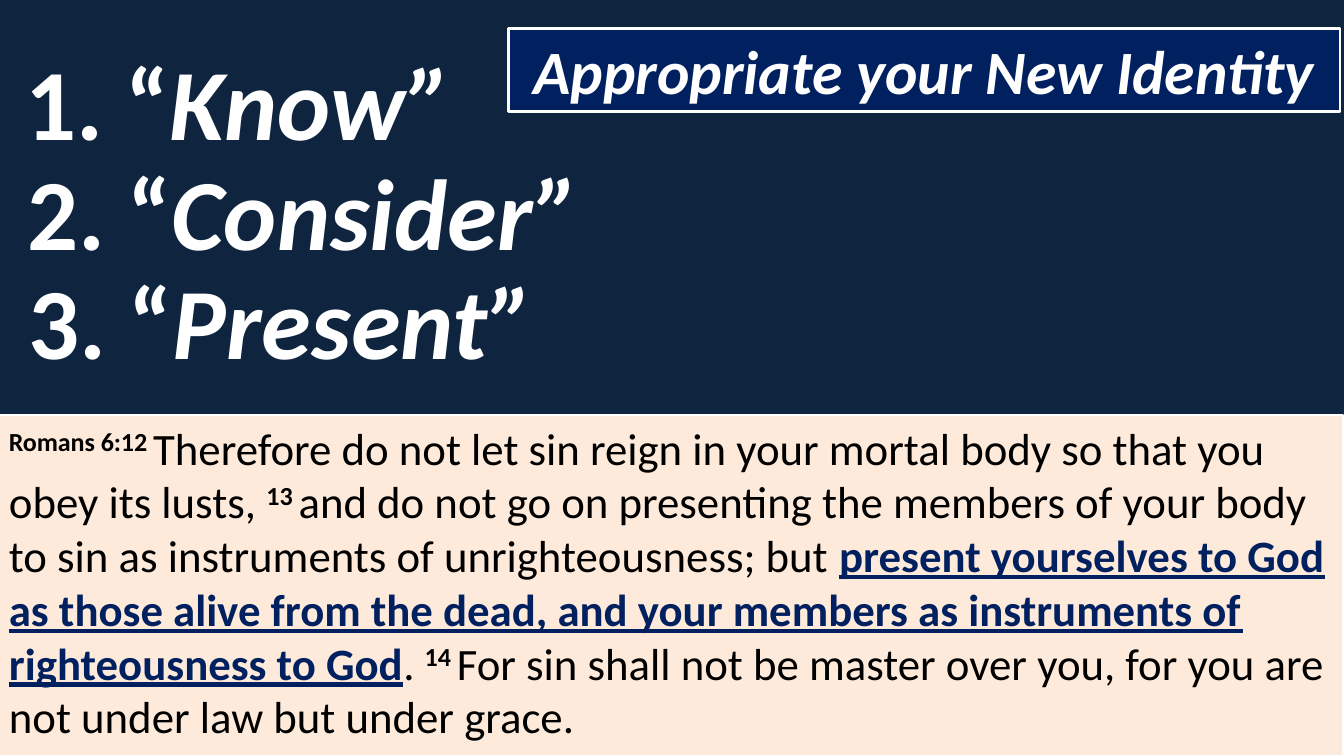
"""Build the "Appropriate your New Identity" scripture slide."""
from pptx import Presentation
from pptx.dml.color import RGBColor
from pptx.enum.shapes import MSO_SHAPE
from pptx.enum.text import MSO_ANCHOR, MSO_AUTO_SIZE, PP_ALIGN
from pptx.oxml import parse_xml
from pptx.oxml.ns import nsdecls
from pptx.util import Inches, Pt

NAVY = RGBColor(0x0F, 0x24, 0x3E)
BLUE = RGBColor(0x00, 0x20, 0x60)
PEACH = RGBColor(0xFD, 0xEA, 0xDA)
WHITE = RGBColor(0xFF, 0xFF, 0xFF)
BLACK = RGBColor(0x00, 0x00, 0x00)

STEPS = [("Know”", 0.15, 4.76), ("Consider”", 0.17, 5.75), ("Present”", 0.18, 5.75)]
STEP_TOP, STEP_PITCH = 0.33, 1.09

VERSE = {"color": BLACK}
NUMBER = {"color": BLACK, "bold": True, "raised": True}
STRESS = {"color": BLUE, "bold": True, "underline": True}
PASSAGE = [
    ("Romans 6:12 ", NUMBER),
    ("Therefore do not let sin reign in your mortal body so that you obey its lusts, ", VERSE),
    ("13 ", NUMBER),
    ("and do not go on presenting the members of your body to sin as instruments "
     "of unrighteousness; but ", VERSE),
    ("present yourselves to God as those alive from the dead, and your members "
     "as instruments of righteousness to God", STRESS),
    (". ", VERSE),
    ("14 ", NUMBER),
    ("For sin shall not be master over you, for you are not under law but under grace.", VERSE),
]
HEADING = {"color": WHITE, "bold": True}
EMPHASIS = {"color": WHITE, "bold": True, "italic": True}


class SlideBuilder:
    """Hold the font and current slide, and add styled elements to it."""

    def __init__(self, slide, font="Calibri"):
        self.slide = slide
        self.font = font

    def background(self, color):
        fill = self.slide.background.fill
        fill.solid()
        fill.fore_color.rgb = color

    def paint(self, sp, fill, line_width):
        sp.fill.solid()
        sp.fill.fore_color.rgb = fill
        sp.line.color.rgb = WHITE
        sp.line.width = Pt(line_width)

    def add_runs(self, sp, runs, size, anchor, align=PP_ALIGN.LEFT):
        tf = sp.text_frame
        tf.word_wrap = True
        tf.auto_size = MSO_AUTO_SIZE.NONE
        tf.vertical_anchor = anchor
        p = tf.paragraphs[0]
        p.alignment = align
        for text, style in runs:
            r = p.add_run()
            r.text = text
            r.font.name = self.font
            r.font.size = Pt(size)
            r.font.color.rgb = style["color"]
            r.font.bold = style.get("bold", False)
            r.font.italic = style.get("italic", False)
            r.font.underline = style.get("underline", False)
            if style.get("raised"):
                r._r.get_or_add_rPr().set("baseline", "30000")

    def title(self, text, left, top, width, height):
        sp = self.slide.shapes.title
        sp.left, sp.top = Inches(left), Inches(top)
        sp.width, sp.height = Inches(width), Inches(height)
        sp._element.spPr.append(parse_xml(
            f'<a:prstGeom {nsdecls("a")} prst="wedgeRoundRectCallout"><a:avLst>'
            '<a:gd name="adj1" fmla="val -21900"/><a:gd name="adj2" fmla="val 49600"/>'
            '<a:gd name="adj3" fmla="val 16700"/></a:avLst></a:prstGeom>'))
        self.paint(sp, BLUE, 2)
        self.add_runs(sp, [(text, EMPHASIS)], 44, MSO_ANCHOR.MIDDLE, PP_ALIGN.CENTER)

    def panel(self, runs, left, top, width, height):
        sp = self.slide.shapes.add_shape(
            MSO_SHAPE.RECTANGLE, Inches(left), Inches(top), Inches(width), Inches(height))
        sp.shadow.inherit = False
        self.paint(sp, PEACH, 1.5)
        self.add_runs(sp, runs, 32, MSO_ANCHOR.TOP)

    def label(self, runs, left, top, width, height):
        sp = self.slide.shapes.add_textbox(
            Inches(left), Inches(top), Inches(width), Inches(height))
        self.add_runs(sp, runs, 72, MSO_ANCHOR.MIDDLE)


def main():
    prs = Presentation()
    prs.slide_width, prs.slide_height = Inches(13.33), Inches(7.5)
    builder = SlideBuilder(prs.slides.add_slide(prs.slide_layouts[5]))
    builder.background(NAVY)
    builder.title("Appropriate your New Identity", 5.04, 0.28, 8.25, 0.83)
    builder.panel(PASSAGE, -0.01, 4.12, 13.33, 3.38)
    for i, (word, left, width) in enumerate(STEPS):
        runs = [(f"{i + 1}. “", HEADING), (word, EMPHASIS)]
        builder.label(runs, left, STEP_TOP + i * STEP_PITCH, width, 1.32)
    prs.save("out.pptx")


if __name__ == "__main__":
    main()
